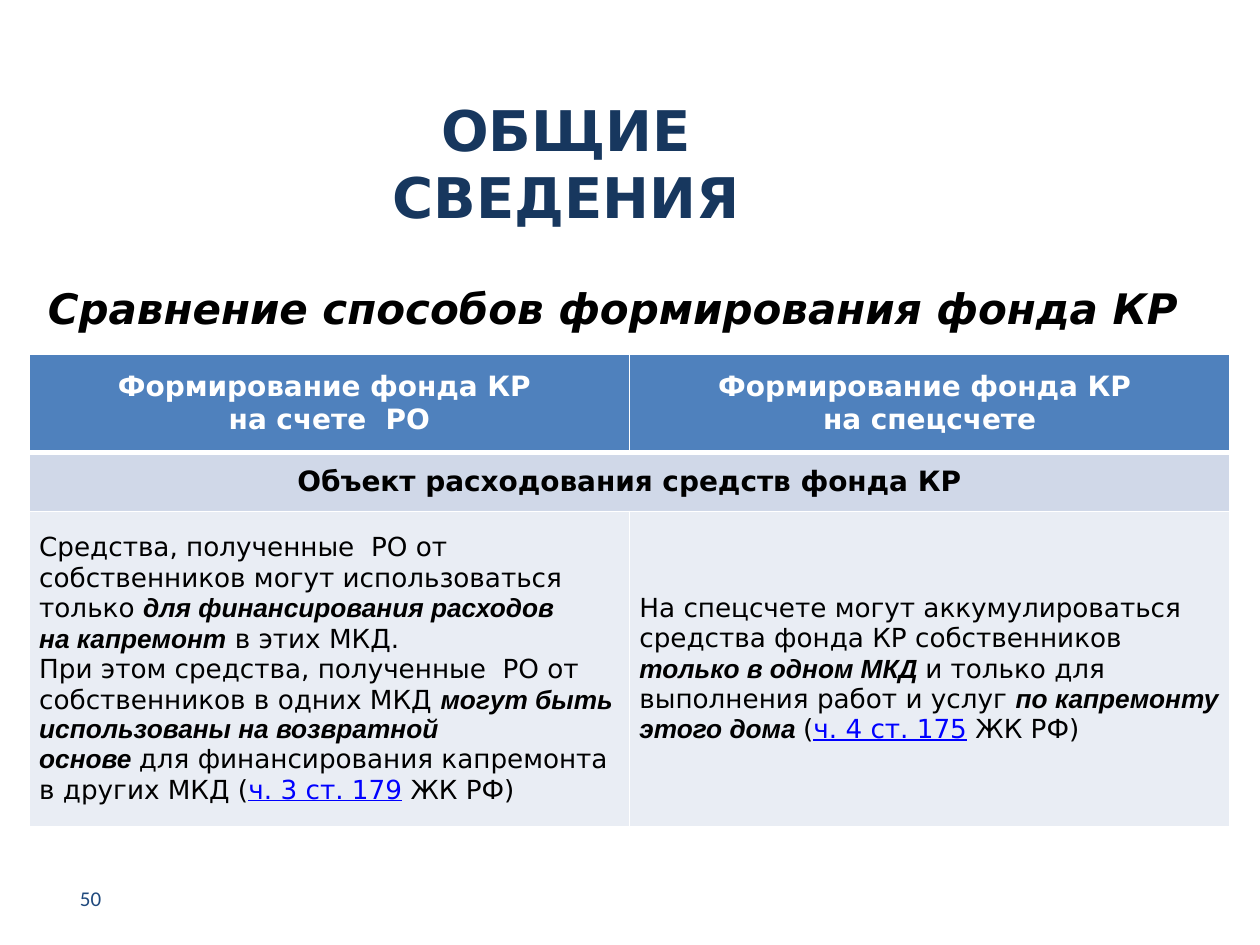
"""Build the slide comparing two ways of forming the capital repair fund."""
from dataclasses import dataclass

from lxml.etree import SubElement
from pptx import Presentation
from pptx.dml.color import RGBColor as Color
from pptx.enum.text import MSO_ANCHOR as Anchor, MSO_AUTO_SIZE as AutoSize, PP_ALIGN as Align
from pptx.oxml import parse_xml
from pptx.oxml.ns import nsdecls, qn
from pptx.util import Cm, Pt


@dataclass(frozen=True)
class Theme:
    navy: str = "17375E"
    number: str = "1F497D"
    black: str = "000000"
    white: str = "FFFFFF"
    link: str = "0000FF"
    header: str = "4F81BD"
    section: str = "D0D8E8"
    details: str = "E9EDF4"
    font: str = "DejaVu Sans"
    accent_font: str = "Arial"
    number_font: str = "Calibri"
    title_size: int = 32
    subtitle_size: int = 24
    header_size: int = 16
    text_size: int = 15
    number_size: int = 12


theme = Theme()


def format_run(run, size, color, bold=False, italic=False, name=theme.font, underline=False):
    font = run.font
    font.name, font.size, font.color.rgb = name, Pt(size), Color.from_string(color)
    font.bold, font.italic, font.underline = bold, italic, underline


def style_cell(cell, fill, bottom_width):
    properties = cell._tc.get_or_add_tcPr()
    for side, width in (("L", 1), ("R", 1), ("T", 1), ("B", bottom_width)):
        properties.append(parse_xml(
            f'<a:ln{side} {nsdecls("a")} w="{Pt(width)}"><a:solidFill>'
            f'<a:srgbClr val="{theme.white}"/></a:solidFill></a:ln{side}>'))
    cell.fill.solid()
    cell.fill.fore_color.rgb = Color.from_string(fill)
    cell.vertical_anchor = Anchor.MIDDLE
    cell.margin_left = cell.margin_right = Cm(0.2)
    cell.margin_top = cell.margin_bottom = Cm(0.1)


presentation = Presentation()
presentation.slide_width, presentation.slide_height = Cm(25.4), Cm(19.05)
slide = presentation.slides.add_slide(presentation.slide_layouts[1])

title, subtitle = slide.placeholders
title.left, title.top, title.width, title.height = Cm(6.15), Cm(1.4), Cm(10.52), Cm(3.76)
title.text_frame.text = "ОБЩИЕ СВЕДЕНИЯ"
title.text_frame.auto_size = AutoSize.NONE
title.text_frame.vertical_anchor = Anchor.MIDDLE
title.text_frame.paragraphs[0].alignment = Align.CENTER
format_run(title.text_frame.paragraphs[0].runs[0], theme.title_size, theme.navy, bold=True)

subtitle.left, subtitle.top, subtitle.width, subtitle.height = Cm(0.71), Cm(5.56), Cm(24.31), Cm(12.29)
subtitle.text_frame.text = "Сравнение способов формирования фонда КР"
subtitle.text_frame.auto_size = AutoSize.NONE
paragraph = subtitle.text_frame.paragraphs[0]
paragraph.space_before = Pt(0)
properties = paragraph._p.get_or_add_pPr()
properties.set("marL", str(Cm(0.95)))
properties.set("indent", str(Cm(-0.95)))
SubElement(properties, qn("a:buNone"))
format_run(paragraph.runs[0], theme.subtitle_size, theme.black, bold=True, italic=True)

number = slide.shapes.add_textbox(Cm(0.89), Cm(17.6), Cm(1.4), Cm(1.02))
number.text_frame.word_wrap = True
number.text_frame.vertical_anchor = Anchor.MIDDLE
number.text_frame.text = "50"
number.text_frame.paragraphs[0].alignment = Align.RIGHT
format_run(number.text_frame.paragraphs[0].runs[0], theme.number_size, theme.number, name=theme.number_font)

table = slide.shapes.add_table(3, 2, Cm(0.59), Cm(7.14), Cm(24.2), Cm(9.52)).table
for column in table.columns:
    column.width = Cm(12.1)
for row, height in zip(table.rows, (1.98, 1.19, 6.35)):
    row.height = Cm(height)
fills = (theme.header, theme.section, theme.details)
for row, fill, bottom_width in zip(table.rows, fills, (3, 1, 1)):
    for cell in row.cells:
        style_cell(cell, fill, bottom_width)
table.cell(1, 0).merge(table.cell(1, 1))

headings = (
    (0, 0, "Формирование фонда КР \nна счете  РО", theme.white),
    (0, 1, "Формирование фонда КР \nна спецсчете", theme.white),
    (1, 0, "Объект расходования средств фонда КР", theme.black),
)
for row_index, column_index, text, color in headings:
    text_frame = table.cell(row_index, column_index).text_frame
    text_frame.text = text
    for paragraph in text_frame.paragraphs:
        paragraph.alignment = Align.CENTER
        format_run(paragraph.runs[0], theme.header_size, color, bold=True)

run_styles = {
    "plain": {"color": theme.black},
    "accent": {"color": theme.black, "bold": True, "italic": True, "name": theme.accent_font},
    "link": {"color": theme.link, "underline": True},
}
details = (
    (
        (("plain", "Средства, полученные  РО от собственников могут использоваться только "),
         ("accent", "для финансирования расходов")),
        (("accent", "на капремонт"), ("plain", " в этих МКД.")),
        (("plain", "При этом средства, полученные  РО от собственников в одних МКД "),
         ("accent", "могут быть использованы на возвратной")),
        (("accent", "основе "), ("plain", "для финансирования капремонта в других МКД ("),
         ("link", "ч. 3 ст. 179"), ("plain", " ЖК РФ)")),
    ),
    (
        (("plain", "На спецсчете могут аккумулироваться средства фонда КР собственников "),
         ("accent", "только в одном МКД "), ("plain", "и только для выполнения работ и услуг "),
         ("accent", "по капремонту этого дома "), ("plain", "("),
         ("link", "ч. 4 ст. 175"), ("plain", " ЖК РФ)")),
    ),
)
for column_index, paragraphs in enumerate(details):
    text_frame = table.cell(2, column_index).text_frame
    for index, runs in enumerate(paragraphs):
        paragraph = text_frame.add_paragraph() if index else text_frame.paragraphs[0]
        for style, text in runs:
            run = paragraph.add_run()
            run.text = text
            format_run(run, theme.text_size, **run_styles[style])

presentation.save("out.pptx")
